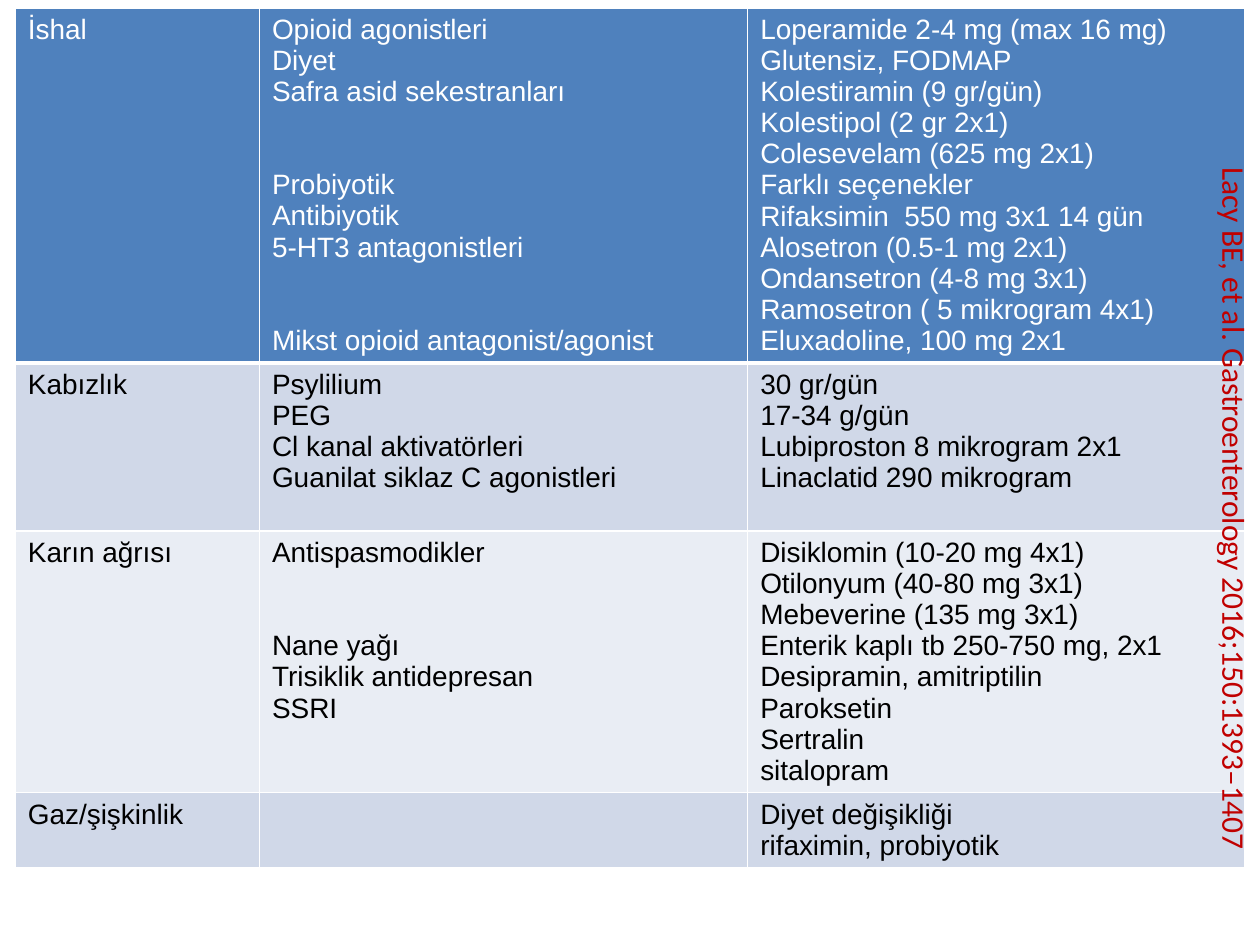
from lxml.etree import SubElement
from pptx import Presentation
from pptx.dml.color import RGBColor as RGB
from pptx.enum.text import MSO_AUTO_SIZE as FIT
from pptx.oxml.ns import qn
from pptx.util import Pt

WHITE = RGB(0xFF, 0xFF, 0xFF)
BLACK = RGB(0, 0, 0)
BLUE = RGB(0x4F, 0x81, 0xBD)
BAND_DARK = RGB(0xD0, 0xD8, 0xE8)
BAND_LIGHT = RGB(0xE9, 0xED, 0xF4)
RED = RGB(0xC0, 0, 0)

GAP = 35.5
COL_WIDTHS = (139.5, 279, 284)
ROW_HEIGHTS = (203, 96, 149.5, 42.5)
ROW_FILLS = (BLUE, BAND_DARK, BAND_LIGHT, BAND_DARK)
AFTER_GAP = {"Probiyotik", "Mikst opioid antagonist/agonist", "Nane yağı"}

TREATMENTS = [
    (["İshal"],
     ["Opioid agonistleri", "Diyet", "Safra asid sekestranları", "Probiyotik",
      "Antibiyotik", "5-HT3 antagonistleri", "Mikst opioid antagonist/agonist"],
     ["Loperamide 2-4 mg (max 16 mg)", "Glutensiz, FODMAP",
      "Kolestiramin (9 gr/gün)", "Kolestipol (2 gr 2x1)",
      "Colesevelam (625 mg 2x1)", "Farklı seçenekler",
      "Rifaksimin  550 mg 3x1 14 gün", "Alosetron (0.5-1 mg 2x1)",
      "Ondansetron (4-8 mg 3x1)", "Ramosetron ( 5 mikrogram 4x1)",
      "Eluxadoline, 100 mg 2x1"]),
    (["Kabızlık"],
     ["Psylilium", "PEG", "Cl kanal aktivatörleri",
      "Guanilat siklaz C agonistleri"],
     ["30 gr/gün", "17-34 g/gün", "Lubiproston 8 mikrogram 2x1",
      "Linaclatid 290 mikrogram"]),
    (["Karın ağrısı"],
     ["Antispasmodikler", "Nane yağı", "Trisiklik antidepresan", "SSRI"],
     ["Disiklomin (10-20 mg 4x1)", "Otilonyum (40-80 mg 3x1)",
      "Mebeverine (135 mg 3x1)", "Enterik kaplı tb 250-750 mg, 2x1",
      "Desipramin, amitriptilin", "Paroksetin", "Sertralin", "sitalopram"]),
    (["Gaz/şişkinlik"],
     [],
     ["Diyet değişikliği", "rifaximin, probiyotik"]),
]


def write(p, text, size=16, font="Arial", color=BLACK, before=0):
    if before:
        p.space_before = Pt(before)
    r = p.add_run()
    r.text = text
    r.font.size = Pt(size)
    r.font.name = font
    r.font.bold = False
    r.font.color.rgb = color


def set_borders(cell, bottom=1):
    tc_pr = cell._tc.get_or_add_tcPr()
    for i, (side, width) in enumerate(zip("LRTB", (1, 1, 1, bottom))):
        ln = SubElement(tc_pr, qn(f"a:ln{side}"), w=str(Pt(width)))
        fill = SubElement(ln, qn("a:solidFill"))
        SubElement(fill, qn("a:srgbClr"), val=str(WHITE))
        tc_pr.insert(i, ln)


def add_treatment_table(slide, x, y, w, h):
    table = slide.shapes.add_table(len(TREATMENTS), len(COL_WIDTHS),
                                   Pt(x), Pt(y), Pt(w), Pt(h)).table
    for column, width in zip(table.columns, COL_WIDTHS):
        column.width = Pt(width)
    for i, (row, height) in enumerate(zip(table.rows, ROW_HEIGHTS)):
        row.height = Pt(height)
        for cell, lines in zip(row.cells, TREATMENTS[i]):
            set_borders(cell, bottom=1 if i else 3)
            cell.fill.solid()
            cell.fill.fore_color.rgb = ROW_FILLS[i]
            tf = cell.text_frame
            for n, line in enumerate(lines):
                p = tf.add_paragraph() if n else tf.paragraphs[0]
                write(p, line, color=BLACK if i else WHITE,
                      before=GAP if line in AFTER_GAP else 0)


def add_citation(slide, x, y, w, h):
    box = slide.shapes.add_textbox(Pt(x), Pt(y), Pt(w), Pt(h))
    box.rotation = 90
    tf = box.text_frame
    tf.word_wrap = False
    tf.auto_size = FIT.SHAPE_TO_FIT_TEXT
    write(tf.paragraphs[0],
          "Lacy BE, et al. Gastroenterology 2016;150:1393–1407",
          size=18, font="Calibri", color=RED)


def main():
    prs = Presentation()
    prs.slide_width, prs.slide_height = Pt(720), Pt(540)
    slide = prs.slides.add_slide(prs.slide_layouts[6])
    add_treatment_table(slide, 8.8, 4.5, sum(COL_WIDTHS), sum(ROW_HEIGHTS))
    add_citation(slide, 501, 278.5, 409, 29)
    prs.save("out.pptx")


if __name__ == "__main__":
    main()
